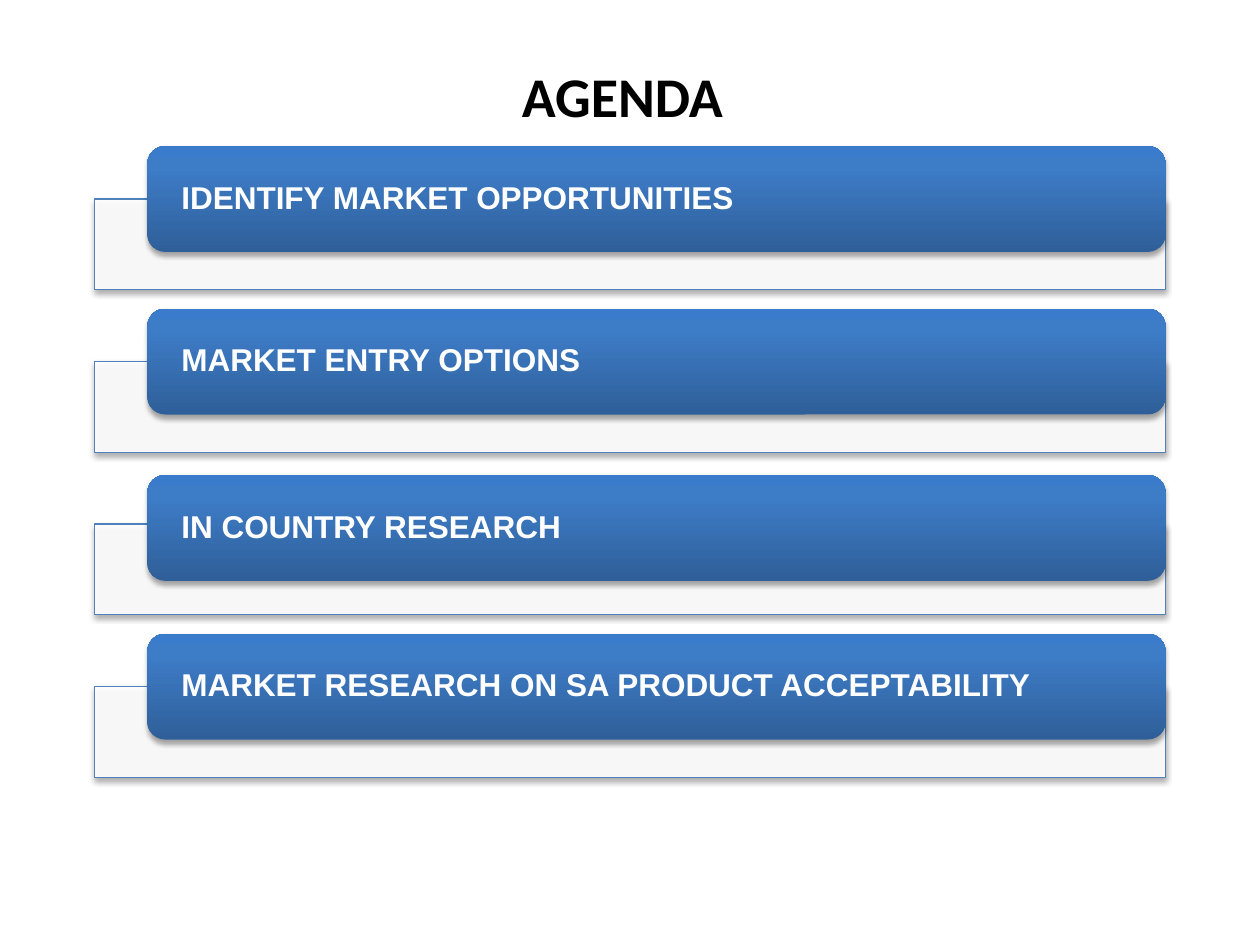
from dataclasses import dataclass

from lxml.etree import SubElement
from pptx import Presentation
from pptx.dml.color import RGBColor
from pptx.enum.shapes import MSO_SHAPE
from pptx.enum.text import MSO_ANCHOR, MSO_AUTO_SIZE, PP_ALIGN
from pptx.oxml.ns import qn
from pptx.shapes.autoshape import Shape
from pptx.shapes.group import GroupShape
from pptx.slide import Slide
from pptx.util import Inches, Pt

BLACK = RGBColor(0x00, 0x00, 0x00)
WHITE = RGBColor(0xFF, 0xFF, 0xFF)
OUTLINE_BLUE = RGBColor(0x4F, 0x81, 0xBD)
DARK_BLUE = RGBColor(0x2F, 0x5F, 0x99)
MID_BLUE = RGBColor(0x3D, 0x7C, 0xC7)
BRIGHT_BLUE = RGBColor(0x3A, 0x7C, 0xCB)

GRADIENT = [(0, DARK_BLUE), (80, MID_BLUE), (100, BRIGHT_BLUE)]
FIRST_FRAME_TOP = 1.58
FRAME_PITCH = 1.29
LABEL_MARGIN = 0.04


@dataclass(frozen=True)
class AgendaItem:
    label: str
    bar_rise: float = 0.42


AGENDA = [
    AgendaItem("IDENTIFY MARKET OPPORTUNITIES"),
    AgendaItem("MARKET ENTRY OPTIONS"),
    AgendaItem("IN COUNTRY RESEARCH", bar_rise=0.39),
    AgendaItem("MARKET RESEARCH ON SA PRODUCT ACCEPTABILITY"),
]


def add_color(parent, color: RGBColor, alpha: int = 100) -> None:
    node = SubElement(parent, qn("a:srgbClr"), val=str(color))
    if alpha < 100:
        SubElement(node, qn("a:alpha"), val=str(alpha * 1000))


def add_shadow(shape: Shape) -> None:
    shape.shadow.inherit = False
    effects = shape._element.spPr.find(qn("a:effectLst"))
    shadow = SubElement(
        effects, qn("a:outerShdw"), blurRad=str(Pt(3.1)), dist=str(Pt(1.8)),
        dir="5400000", rotWithShape="0",
    )
    add_color(shadow, BLACK, alpha=35)


def fill_gradient(shape: Shape) -> None:
    shape.fill.gradient()
    shape.fill.gradient_angle = 90
    stops = shape._element.spPr.find(qn("a:gradFill")).find(qn("a:gsLst"))
    for stop in list(stops):
        stops.remove(stop)
    for position, color in GRADIENT:
        add_color(SubElement(stops, qn("a:gs"), pos=str(position * 1000)), color)


def add_frame(group: GroupShape, top: float) -> None:
    frame = group.shapes.add_shape(
        MSO_SHAPE.RECTANGLE, Inches(0.75), Inches(top), Inches(8.5), Inches(0.72)
    )
    frame.fill.solid()
    frame.fill.fore_color.rgb = WHITE
    color = frame._element.spPr.find(qn("a:solidFill"))[0]
    SubElement(color, qn("a:alpha"), val="90000")
    frame.line.color.rgb = OUTLINE_BLUE
    frame.line.width = Pt(0.75)
    add_shadow(frame)


def add_bar(group: GroupShape, top: float) -> None:
    bar = group.shapes.add_shape(
        MSO_SHAPE.ROUNDED_RECTANGLE, Inches(1.17), Inches(top), Inches(8.08), Inches(0.84)
    )
    fill_gradient(bar)
    bar.line.fill.background()
    add_shadow(bar)


def add_span(box: Shape, text: str, font: str, size: int, color: RGBColor) -> None:
    span = box.text_frame.paragraphs[0].add_run()
    span.text = text
    span.font.name = font
    span.font.size = Pt(size)
    span.font.bold = True
    span.font.color.rgb = color


def add_label(group: GroupShape, text: str, bar_top: float) -> None:
    box = group.shapes.add_textbox(
        Inches(1.17 + LABEL_MARGIN), Inches(bar_top + LABEL_MARGIN),
        Inches(8.08 - 2 * LABEL_MARGIN), Inches(0.84 - 2 * LABEL_MARGIN),
    )
    frame = box.text_frame
    frame.word_wrap = True
    frame.vertical_anchor = MSO_ANCHOR.MIDDLE
    frame.margin_left = frame.margin_right = Inches(0.23)
    frame.margin_top = frame.margin_bottom = Inches(0)
    para = frame.paragraphs[0]
    para.line_spacing = 0.9
    para.space_after = Pt(6.3)
    add_span(box, text, "Arial", 18, WHITE)


def add_title(page: Slide, text: str) -> None:
    box = page.shapes.add_textbox(Inches(0), Inches(0.44), Inches(9.88), Inches(0.64))
    box.text_frame.word_wrap = True
    box.text_frame.auto_size = MSO_AUTO_SIZE.SHAPE_TO_FIT_TEXT
    box.text_frame.paragraphs[0].alignment = PP_ALIGN.CENTER
    add_span(box, text, "Calibri", 32, BLACK)


def main() -> None:
    deck = Presentation()
    deck.slide_width = Inches(10)
    deck.slide_height = Inches(7.5)
    page = deck.slides.add_slide(deck.slide_layouts[6])
    page.background.fill.solid()
    page.background.fill.fore_color.rgb = WHITE

    add_title(page, "AGENDA")
    group = page.shapes.add_group_shape()
    for index, item in enumerate(AGENDA):
        frame_top = FIRST_FRAME_TOP + index * FRAME_PITCH
        bar_top = frame_top - item.bar_rise
        add_frame(group, frame_top)
        add_bar(group, bar_top)
        add_label(group, item.label, bar_top)

    deck.save("out.pptx")


if __name__ == "__main__":
    main()
